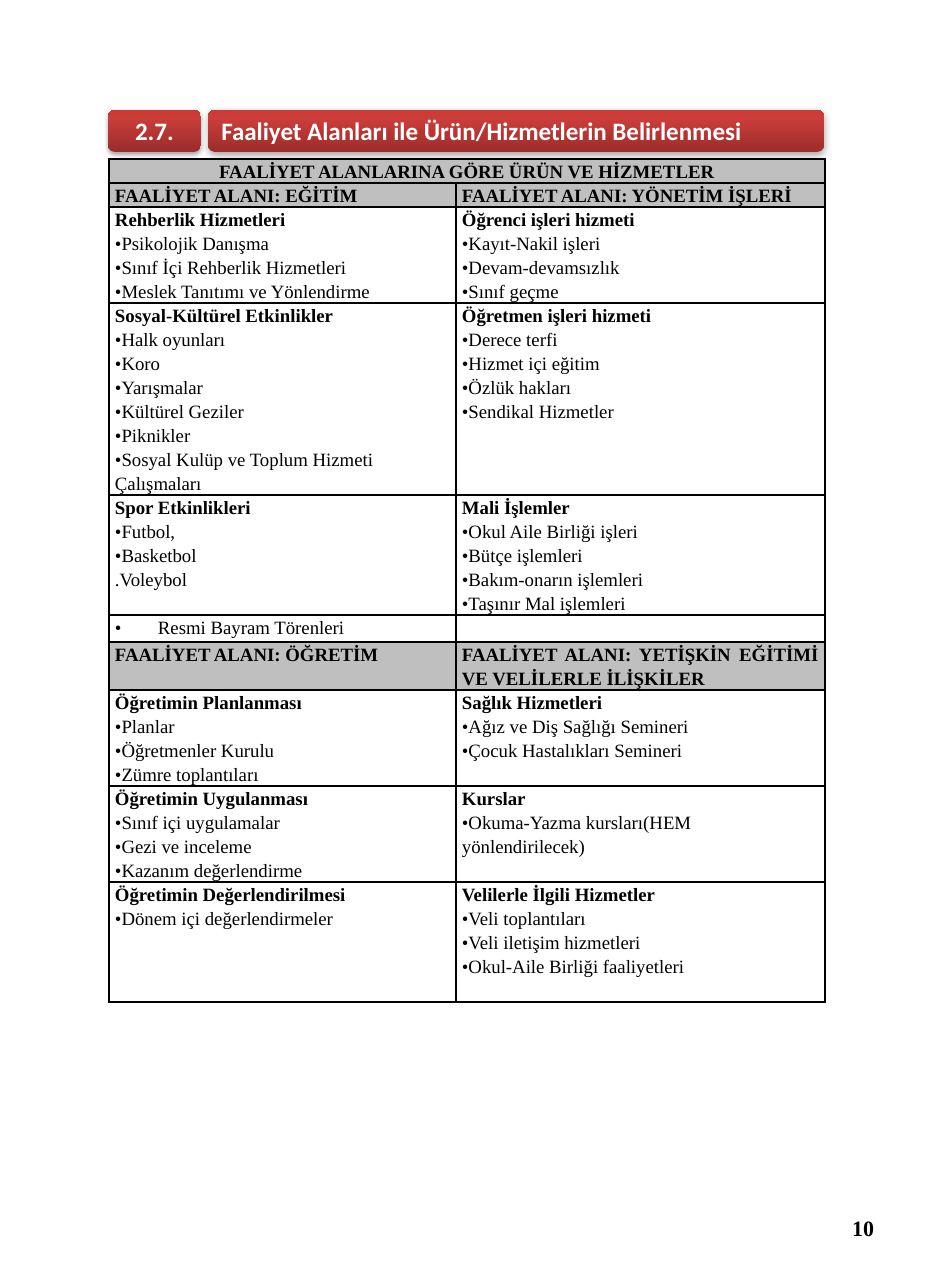
"""Build the page of activity areas with their products and services."""
from pptx import Presentation
from pptx.dml.color import RGBColor
from pptx.enum.shapes import MSO_SHAPE
from pptx.enum.text import MSO_ANCHOR, MSO_AUTO_SIZE, PP_ALIGN
from pptx.oxml import parse_xml
from pptx.oxml.ns import nsdecls
from pptx.util import Emu, Pt

COLORS = {
    "black": "000000",
    "white": "FFFFFF",
    "gray": "BFBFBF",
    "banner": ["9B2D2A", "CB3D3A", "CE3B37"],
    "badge": ["992D2B", "C93D39", "CD3A36"],
}
SERIF = "Times New Roman"
LINE = 24
AREA_ROWS = (1, 6)
LEFT_ALIGNED = {
    "Yarışmalar", "Kültürel Geziler", "Piknikler",
    "Sosyal Kulüp ve Toplum Hizmeti Çalışmaları",
    "Okuma-Yazma kursları(HEM yönlendirilecek)",
}
ROWS = [
    (LINE, ["FAALİYET ALANLARINA GÖRE ÜRÜN VE HİZMETLER"], []),
    (LINE, ["FAALİYET ALANI: EĞİTİM"], ["FAALİYET ALANI: YÖNETİM İŞLERİ"]),
    (4 * LINE,
     ["Rehberlik Hizmetleri", "•Psikolojik Danışma", "•Sınıf İçi Rehberlik Hizmetleri",
      "•Meslek Tanıtımı ve Yönlendirme"],
     ["Öğrenci işleri hizmeti", "•Kayıt-Nakil işleri", "•Devam-devamsızlık", "•Sınıf geçme"]),
    (8 * LINE,
     ["Sosyal-Kültürel Etkinlikler", "•Halk oyunları", "•Koro", "•Yarışmalar",
      "•Kültürel Geziler", "•Piknikler", "•Sosyal Kulüp ve Toplum Hizmeti Çalışmaları"],
     ["Öğretmen işleri hizmeti", "•Derece terfi", "•Hizmet içi eğitim", "•Özlük hakları",
      "•Sendikal Hizmetler"]),
    (5 * LINE,
     ["Spor Etkinlikleri", "•Futbol,", "•Basketbol", ".Voleybol"],
     ["Mali İşlemler", "•Okul Aile Birliği işleri", "•Bütçe işlemleri",
      "•Bakım-onarın işlemleri", "•Taşınır Mal işlemleri"]),
    (27, ["•Resmi Bayram Törenleri"], []),
    (2 * LINE,
     ["FAALİYET ALANI: ÖĞRETİM"],
     ["FAALİYET ALANI: YETİŞKİN EĞİTİMİ VE VELİLERLE İLİŞKİLER"]),
    (4 * LINE,
     ["Öğretimin Planlanması", "•Planlar", "•Öğretmenler Kurulu", "•Zümre toplantıları"],
     ["Sağlık Hizmetleri", "•Ağız ve Diş Sağlığı Semineri", "•Çocuk Hastalıkları Semineri"]),
    (4 * LINE,
     ["Öğretimin Uygulanması", "•Sınıf içi uygulamalar", "•Gezi ve inceleme",
      "•Kazanım değerlendirme"],
     ["Kurslar", "•Okuma-Yazma kursları(HEM yönlendirilecek)"]),
    (5 * LINE,
     ["Öğretimin Değerlendirilmesi", "•Dönem içi değerlendirmeler"],
     ["Velilerle İlgili Hizmetler", "•Veli toplantıları", "•Veli iletişim hizmetleri",
      "•Okul-Aile Birliği faaliyetleri"]),
]


def px(length):
    return Emu(round(length * 914400 / 112.8))


def write_text(paragraph, text, size=12, font=SERIF, color="black", bold=True,
               alignment=PP_ALIGN.JUSTIFY, spacing=1.0):
    paragraph.alignment = alignment
    paragraph.line_spacing = spacing
    run = paragraph.add_run()
    run.text = text
    run.font.size = Pt(size)
    run.font.name = font
    run.font.bold = bold
    run.font.color.rgb = RGBColor.from_string(COLORS[color])


presentation = Presentation()
presentation.slide_width = px(933)
presentation.slide_height = px(1288)
slide = presentation.slides.add_slide(presentation.slide_layouts[5])

for name, left, width, blur in [("banner", 208, 616, 5), ("badge", 108, 93, 3.1)]:
    shape = slide.shapes.add_shape(
        MSO_SHAPE.ROUNDED_RECTANGLE, px(left), px(110), px(width), px(42))
    shape.line.fill.background()
    outline = shape.element.spPr.ln
    gradient_stops = "".join(
        f'<a:gs pos="{position}"><a:srgbClr val="{color}"/></a:gs>'
        for position, color in zip((0, 80000, 100000), COLORS[name]))
    outline.addprevious(parse_xml(
        f'<a:gradFill {nsdecls("a")} rotWithShape="1"><a:gsLst>{gradient_stops}</a:gsLst>'
        '<a:lin ang="16200000" scaled="0"/></a:gradFill>'))
    outline.addnext(parse_xml(
        f'<a:effectLst {nsdecls("a")}><a:outerShdw blurRad="{Pt(blur)}" dist="{Pt(1.8)}" '
        f'dir="5400000" rotWithShape="0"><a:srgbClr val="{COLORS["black"]}">'
        '<a:alpha val="35000"/></a:srgbClr></a:outerShdw></a:effectLst>'))
badge = shape

title = slide.shapes.title
title.left, title.top, title.width, title.height = px(210), px(110), px(614), px(42)
slide.shapes._spTree.append(title.element)
for shape, text, alignment in [
    (title, "Faaliyet Alanları ile Ürün/Hizmetlerin Belirlenmesi", PP_ALIGN.LEFT),
    (badge, "2.7.", PP_ALIGN.CENTER),
]:
    frame = shape.text_frame
    frame.word_wrap = True
    frame.auto_size = MSO_AUTO_SIZE.NONE
    frame.vertical_anchor = MSO_ANCHOR.MIDDLE
    write_text(frame.paragraphs[0], text, size=16, font="Calibri", color="white",
               alignment=alignment)

heights = [height for height, *_ in ROWS]
table = slide.shapes.add_table(len(ROWS), 2, px(109), px(159), px(716), px(sum(heights))).table
table.first_row = False
table.horz_banding = False
for column, width in zip(table.columns, (347, 369)):
    column.width = px(width)

for row_index, (height, *contents) in enumerate(ROWS):
    table.rows[row_index].height = px(height)
    shaded = row_index == 0 or row_index in AREA_ROWS
    for column_index, lines in enumerate(contents):
        cell = table.cell(row_index, column_index)
        frame = cell.text_frame
        cell.margin_left = cell.margin_right = px(6)
        cell.margin_top = cell.margin_bottom = 0
        for side in ("lnL", "lnR", "lnT", "lnB"):
            cell._tc.get_or_add_tcPr().append(parse_xml(
                f'<a:{side} {nsdecls("a")} w="{Pt(1)}"><a:solidFill>'
                f'<a:srgbClr val="{COLORS["black"]}"/></a:solidFill></a:{side}>'))
        if shaded:
            cell.fill.solid()
            cell.fill.fore_color.rgb = RGBColor.from_string(COLORS["gray"])
        else:
            cell.fill.background()
        if not lines:
            frame.paragraphs[0]._p.append(parse_xml(
                f'<a:endParaRPr {nsdecls("a")} sz="1200"/>'))
        for line_index, line in enumerate(lines):
            paragraph = frame.add_paragraph() if line_index else frame.paragraphs[0]
            bulleted = line.startswith("•")
            text = line.removeprefix("•")
            if bulleted:
                margin, indent = (0, -9) if line_index else (43, -43)
                properties = paragraph._p.get_or_add_pPr()
                properties.set("marL", str(px(margin)))
                properties.set("indent", str(px(indent)))
                for bullet in (
                    f'<a:buClr {nsdecls("a")}><a:srgbClr val="{COLORS["black"]}"/></a:buClr>',
                    f'<a:buFont {nsdecls("a")} typeface="{SERIF}"/>',
                    f'<a:buChar {nsdecls("a")} char="•"/>',
                ):
                    properties.append(parse_xml(bullet))
            alignment = PP_ALIGN.LEFT if text in LEFT_ALIGNED else PP_ALIGN.JUSTIFY
            write_text(paragraph, text, bold=not bulleted and not text.startswith("."),
                       alignment=PP_ALIGN.CENTER if row_index == 0 else alignment, spacing=1.15)
table.cell(0, 0).merge(table.cell(0, 1))

page_number = slide.shapes.add_textbox(px(668), px(1193), px(218), px(69))
frame = page_number.text_frame
frame.word_wrap = True
frame.vertical_anchor = MSO_ANCHOR.MIDDLE
frame.margin_left = frame.margin_right = px(12)
frame.margin_top = frame.margin_bottom = px(7)
write_text(frame.paragraphs[0], "10", size=14, alignment=PP_ALIGN.RIGHT)

presentation.save("out.pptx")
